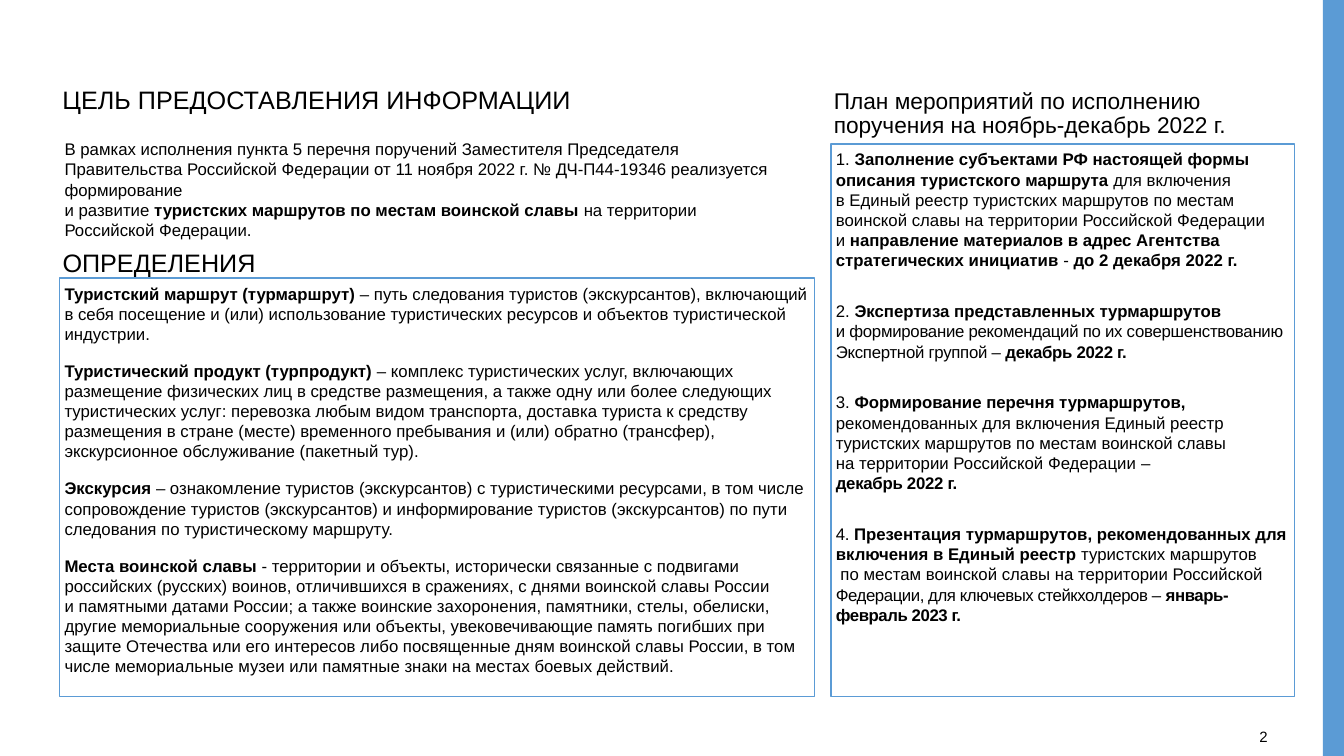
from lxml import etree
from pptx import Presentation
from pptx import util as u
from pptx.dml import color
from pptx.enum import shapes, text
from pptx.oxml import ns

WIDTH, HEIGHT = 13.33, 7.5
LEFT, RIGHT = 0.59, 8.24
HEADING_TOP, BOTTOM = 0.86, 6.91
BLUE, BLACK, WHITE = "5B9BD5", "000000", "FFFFFF"
TIGHT, ROOMY = 0.03, 0.05

PURPOSE = [[
    ("В рамках исполнения пункта 5 перечня поручений Заместителя Председателя "
     "Правительства Российской Федерации от 11 ноября 2022 г. № ДЧ-П44-19346 "
     "реализуется формирование \nи развитие ", False, 0),
    ("туристских маршрутов по местам воинской славы ", True, 0),
    ("на территории \nРоссийской Федерации.", False, 0),
]]

DEFINITIONS = {
    "Туристский маршрут (турмаршрут) ":
        "– путь следования туристов (экскурсантов), включающий в себя посещение и (или) "
        "использование туристических ресурсов и объектов туристической индустрии.",
    "Туристический продукт (турпродукт) ":
        "– комплекс туристических услуг, включающих размещение физических лиц в средстве "
        "размещения, а также одну или более следующих туристических услуг: перевозка любым "
        "видом транспорта, доставка туриста к средству размещения в стране (месте) временного "
        "пребывания и (или) обратно (трансфер), экскурсионное обслуживание (пакетный тур).",
    "Экскурсия ":
        "– ознакомление туристов (экскурсантов) с туристическими ресурсами, в том числе "
        "сопровождение туристов (экскурсантов) и информирование туристов (экскурсантов) "
        "по пути следования по туристическому маршруту.",
    "Места воинской славы ":
        "- территории и объекты, исторически связанные с подвигами российских (русских) "
        "воинов, отличившихся в сражениях, с днями воинской славы России \nи памятными датами "
        "России; а также воинские захоронения, памятники, стелы, обелиски, другие мемориальные "
        "сооружения или объекты, увековечивающие память погибших при защите Отечества или его "
        "интересов либо посвященные дням воинской славы России, в том числе мемориальные музеи "
        "или памятные знаки на местах боевых действий.",
}

PLAN = [
    [("1. ", False, 0),
     ("Заполнение субъектами РФ настоящей формы описания туристского маршрута ", True, 0),
     ("для включения \nв Единый реестр туристских маршрутов по местам воинской славы "
      "на территории Российской Федерации \nи ", False, 0),
     ("направление материалов в адрес Агентства стратегических инициатив", True, 0),
     (" - ", False, 0),
     ("до 2 декабря 2022 г.", True, 0)],
    [("2. ", False, 0),
     ("Экспертиза представленных турмаршрутов \n", True, 0),
     ("и формирование рекомендаций по их совершенствованию Экспертной группой – ", False, -0.2),
     ("декабрь 2022 г.", True, -0.2)],
    [("3. ", False, 0),
     ("Формирование перечня турмаршрутов, ", True, 0),
     ("рекомендованных для включения Единый реестр туристских маршрутов по местам воинской "
      "славы \nна территории Российской Федерации ", False, 0),
     ("–\n", False, -0.2),
     ("декабрь 2022 г.", True, -0.2)],
    [("4. ", False, -0.2),
     ("Презентация турмаршрутов, рекомендованных для включения в Единый реестр ", True, 0),
     ("туристских маршрутов\n по местам воинской славы на территории Российской ", False, 0),
     ("Федерации, для ключевых стейкхолдеров – ", False, -0.3),
     ("январь-февраль 2023 г.", True, -0.3)],
]


def paint(target, value):
    """Give a fill or line format a solid hex colour."""
    target.solid()
    target.fore_color.rgb = color.RGBColor.from_string(value)


def place(box, left, top, width, height):
    """Move and size a shape in inches."""
    box.left, box.top = u.Inches(left), u.Inches(top)
    box.width, box.height = u.Inches(width), u.Inches(height)


def add_box(page, area):
    """Add an empty text box over an area."""
    return page.shapes.add_textbox(*(u.Inches(length) for length in area))


def add_span(para, words, bold, spacing, size):
    """Add formatted runs, with a line break at each newline."""
    for index, part in enumerate(words.split("\n")):
        if index:
            para.add_line_break()
        if part:
            span = para.add_run()
            span.text = part
            span.font.name, span.font.size, span.font.bold = "Arial", u.Pt(size), bold
            span.font.color.rgb = color.RGBColor.from_string(BLACK)
            if spacing:
                span.font._element.set("spc", str(round(spacing * 100)))


def write(box, paragraphs, size, inset, gap=0, leading=1.0):
    """Fill a box with left-aligned, unbulleted paragraphs."""
    frame = box.text_frame
    frame.word_wrap, frame.auto_size = True, text.MSO_AUTO_SIZE.NONE
    frame.vertical_anchor = text.MSO_ANCHOR.TOP
    frame.margin_left = frame.margin_right = u.Inches(inset)
    frame.margin_top = frame.margin_bottom = u.Inches(inset)
    for index, spans in enumerate(paragraphs):
        para = frame.add_paragraph() if index else frame.paragraphs[0]
        settings = para._p.get_or_add_pPr()
        settings.set("marL", "0")
        settings.set("indent", "0")
        etree.SubElement(settings, ns.qn("a:buNone"))
        para.alignment, para.line_spacing = text.PP_ALIGN.LEFT, leading
        para.space_before = u.Pt(gap if index else 0)
        for words, bold, spacing in spans:
            add_span(para, words, bold, spacing, size)


def write_panel(panel, area, paragraphs, gap):
    """Turn a body placeholder into a framed list."""
    place(panel, *area)
    paint(panel.fill, WHITE)
    paint(panel.line.fill, BLUE)
    panel.line.width = u.Pt(1)
    write(panel, paragraphs, 12, ROOMY, gap)


def build_purpose(page, left, top):
    """Place the purpose heading and its text."""
    heading = add_box(page, (left, top, 5.13, 0.44))
    write(heading, [[("ЦЕЛЬ ПРЕДОСТАВЛЕНИЯ ИНФОРМАЦИИ", False, 0)]], 18, TIGHT, leading=0.8)
    write(add_box(page, (left, top + 0.47, 7.42, 0.99)), PURPOSE, 12, ROOMY)


def build_definitions(title, panel, left, top):
    """Place the definitions title and its framed list."""
    place(title, left, top, 3.3, 0.44)
    write(title, [[("ОПРЕДЕЛЕНИЯ", False, 0)]], 18, TIGHT)
    entries = [[(term, True, 0), (meaning, False, 0)] for term, meaning in DEFINITIONS.items()]
    panel_top = top + 0.34
    write_panel(panel, (left, panel_top, 7.49, BOTTOM - panel_top), entries, 12)


def build_plan(page, panel, left, top):
    """Place the plan heading and its framed list."""
    heading = "План мероприятий по исполнению поручения на ноябрь-декабрь 2022 г."
    box = add_box(page, (left, top, 4.39, 0.56))
    write(box, [[(heading, False, 0)]], 16.2, TIGHT, leading=0.9)
    panel_top = top + 0.57
    write_panel(panel, (left, panel_top, 4.6, BOTTOM - panel_top), PLAN, 22)


def build_edge(page):
    """Add the blue side band and the page number."""
    band = page.shapes.add_shape(
        shapes.MSO_SHAPE.RECTANGLE, u.Inches(WIDTH - 0.21), 0, u.Inches(0.21), u.Inches(HEIGHT))
    band.shadow.inherit = False
    paint(band.fill, BLUE)
    band.line.fill.background()
    number = add_box(page, (12.49, 7.13, 0.14, 0.27))
    write(number, [[("2", False, 0)]], 10.7, 0, leading=1.5)


def main():
    """Build and save the deck."""
    deck = Presentation()
    deck.slide_width, deck.slide_height = u.Inches(WIDTH), u.Inches(HEIGHT)
    page = deck.slides.add_slide(deck.slide_layouts.get_by_name("Two Content"))
    title, definitions, plan = page.placeholders
    build_edge(page)
    build_purpose(page, LEFT, HEADING_TOP)
    build_definitions(title, definitions, LEFT, 2.42)
    build_plan(page, plan, RIGHT, HEADING_TOP)
    deck.save("out.pptx")


if __name__ == "__main__":
    main()
